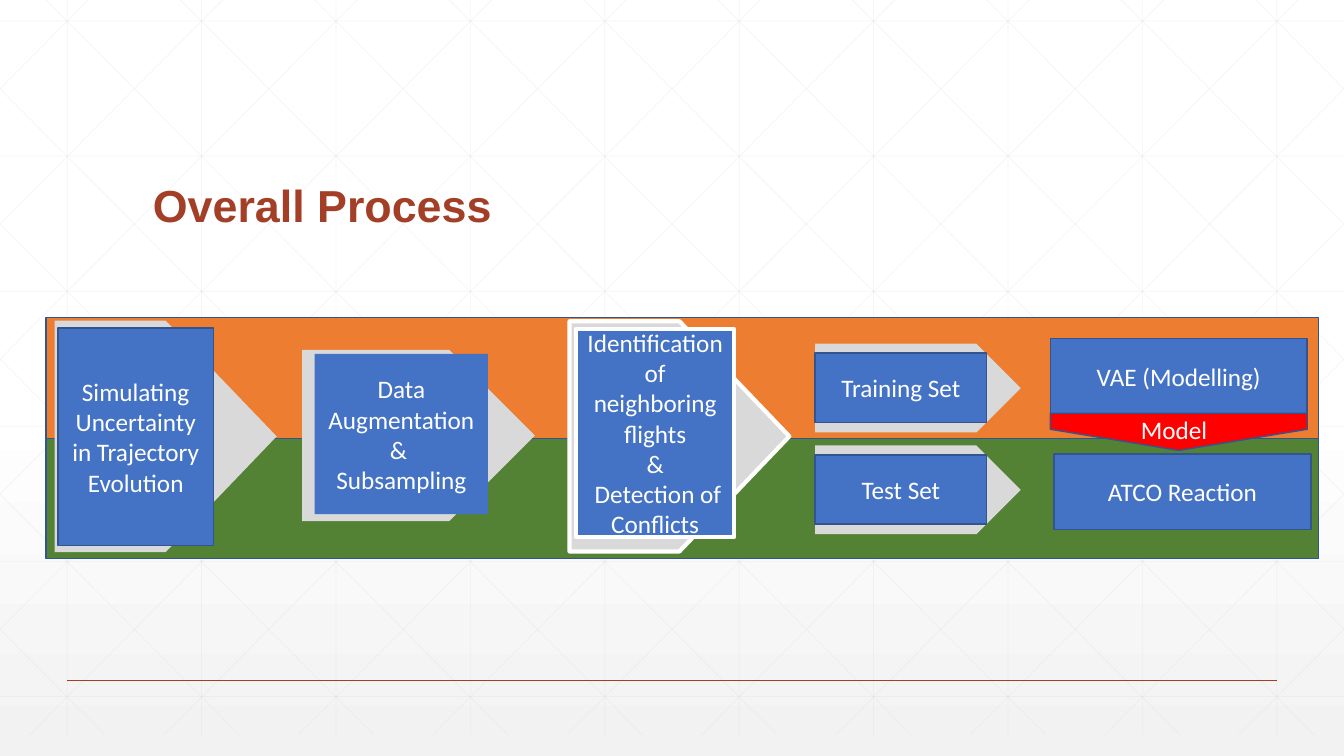
from dataclasses import dataclass

import pptx
import pptx.dml.color
import pptx.enum.shapes
import pptx.enum.text
import pptx.oxml
import pptx.oxml.ns
import pptx.util
from lxml import etree

Pt = pptx.util.Pt
Shape = pptx.enum.shapes.MSO_SHAPE
Align = pptx.enum.text.PP_ALIGN
Anchor = pptx.enum.text.MSO_ANCHOR

COLORS = {
    "white": "FFFFFF",
    "mist": "F2F2F2",
    "grid": "D9D9D9",
    "rust": "A43F27",
    "green": "548235",
    "orange": "ED7D31",
    "blue": "4472C4",
    "edge": "325491",
    "red": "FF0000",
}
PAGE_WIDTH, PAGE_HEIGHT = 960, 540
GRID_TOP, GRID_BOTTOM = -15, 525
GRID_STEP = 96
DIAGONAL_RUN = 537


@dataclass
class Block:
    left: float
    top: float
    width: float
    height: float
    fill: str = "blue"
    edge: str | None = "edge"
    edge_width: float = 1
    lines: tuple[str, ...] = ()
    shape: Shape = Shape.RECTANGLE
    rotation: float = 0
    point: float = 0.5


@dataclass
class Rule:
    x1: float
    y1: float
    x2: float
    y2: float
    color: str = "grid"
    width: float = 0.5
    opacity: int = 25


def arrow(left: float, top: float, width: float, height: float,
          edge: str | None = None, edge_width: float = 1) -> Block:
    return Block(left, top, width, height, "grid", edge, edge_width, shape=Shape.PENTAGON)


def rgb(name: str) -> pptx.dml.color.RGBColor:
    return pptx.dml.color.RGBColor.from_string(COLORS[name])


def format_text(frame, lines: tuple[str, ...], align: Align) -> None:
    frame.word_wrap = True
    for index, line in enumerate(lines):
        para = frame.paragraphs[0] if index == 0 else frame.add_paragraph()
        para.text = line
        para.alignment = align
        para.font.name = "Calibri"
        para.font.size = Pt(18)
        para.font.color.rgb = rgb("white")


def draw_block(page, block: Block) -> None:
    shape = page.shapes.add_shape(block.shape, Pt(block.left), Pt(block.top),
                                  Pt(block.width), Pt(block.height))
    shape.shadow.inherit = False
    shape.rotation = block.rotation
    if block.shape == Shape.PENTAGON:
        shape.adjustments[0] = block.point
    shape.fill.solid()
    shape.fill.fore_color.rgb = rgb(block.fill)
    if block.edge:
        shape.line.color.rgb = rgb(block.edge)
        shape.line.width = Pt(block.edge_width)
    else:
        shape.line.fill.background()
    if block.lines:
        shape.text_frame.vertical_anchor = Anchor.MIDDLE
        format_text(shape.text_frame, block.lines, Align.CENTER)


def draw_rule(page, rule: Rule) -> None:
    line = page.shapes.add_connector(pptx.enum.shapes.MSO_CONNECTOR.STRAIGHT,
                                     Pt(rule.x1), Pt(rule.y1), Pt(rule.x2), Pt(rule.y2))
    line.line.color.rgb = rgb(rule.color)
    line.line.width = Pt(rule.width)
    qn = pptx.oxml.ns.qn
    properties = line._element.spPr
    if rule.opacity < 100:
        color = next(properties.iter(qn("a:srgbClr")))
        etree.SubElement(color, qn("a:alpha")).set("val", str(rule.opacity * 1000))
    etree.SubElement(properties, qn("a:effectLst"))


def diagonal(start: float) -> Rule:
    slope = (GRID_BOTTOM - GRID_TOP) / DIAGONAL_RUN
    left, right = max(start, 0), min(start + DIAGONAL_RUN, PAGE_WIDTH)
    return Rule(left, GRID_TOP + (left - start) * slope,
                right, GRID_TOP + (right - start) * slope)


def grid_rules() -> list[Rule]:
    verticals = [Rule(48 + GRID_STEP * k, GRID_TOP, 48 + GRID_STEP * k, GRID_BOTTOM)
                 for k in range(10)]
    horizontals = [Rule(0, 15 + 96.5 * k, PAGE_WIDTH, 15 + 96.5 * k) for k in range(6)]
    falling = [diagonal(18 + GRID_STEP * k) for k in range(-5, 10)]
    rising = [Rule(PAGE_WIDTH - rule.x1, rule.y1, PAGE_WIDTH - rule.x2, rule.y2)
              for rule in falling]
    return verticals + horizontals + falling + rising


def draw_background(page) -> None:
    fill = page.background.fill
    fill.gradient()
    fill.gradient_angle = 270
    for stop, position, name in zip(fill.gradient_stops, (0.53, 1), ("white", "mist")):
        stop.position = position
        stop.color.rgb = rgb(name)
    for rule in grid_rules():
        draw_rule(page, rule)
    draw_rule(page, Rule(48, 486, 912, 486, "rust", 1, 100))


def draw_title(page) -> None:
    title = page.shapes.title
    page.shapes._spTree.append(title._element)
    title.left, title.top, title.width, title.height = Pt(102), Pt(39.6), Pt(756), Pt(129.6)
    frame = title.text_frame
    frame.text = "Overall Process"
    frame.auto_size = pptx.enum.text.MSO_AUTO_SIZE.NONE
    frame.vertical_anchor = Anchor.BOTTOM
    para = frame.paragraphs[0]
    para.alignment = Align.LEFT
    para.line_spacing = 0.9
    para.font.name = "Arial"
    para.font.size = Pt(32)
    para.font.bold = True
    para.font.color.rgb = rgb("rust")


def process_blocks() -> list[Block]:
    blocks = [
        Block(33, 313.2, 908.8, 85.8, "green"),
        Block(33, 226.6, 908.8, 86.8, "orange"),
    ]
    for top, label in ((245.5, "Training Set"), (318.2, "Test Set")):
        blocks += [arrow(582.3, top, 146.8, 63.4),
                   Block(582.3, top + 6.7, 122.4, 49.5, lines=(label,))]
    return blocks + [
        Block(753, 324.2, 183.4, 54, lines=("ATCO Reaction",)),
        arrow(39, 229, 158.6, 165.4),
        Block(41.5, 234.2, 110.9, 155.5,
              lines=("Simulating Uncertainty in Trajectory Evolution",)),
        Block(750.3, 241.7, 183.4, 54, lines=("VAE (Modelling)",)),
        Block(828.7, 216.7, 26.6, 183.6, "red", shape=Shape.PENTAGON,
              rotation=90, point=0.57),
        arrow(215.8, 250, 166.3, 122.2),
        Block(224.8, 252.8, 123.8, 114.5, edge=None,
              lines=("Data Augmentation & ", "Subsampling")),
        arrow(406.8, 229.5, 157, 164.4, "white", 3),
        Block(411.5, 235, 113, 148.6, edge="white", edge_width=3,
              lines=("Identification of neighboring flights", "&",
                     " Detection of Conflicts")),
    ]


def main() -> None:
    deck = pptx.Presentation()
    deck.slide_width, deck.slide_height = Pt(PAGE_WIDTH), Pt(PAGE_HEIGHT)
    page = deck.slides.add_slide(deck.slide_layouts[5])
    draw_background(page)
    draw_title(page)
    for block in process_blocks():
        draw_block(page, block)
    model_label = page.shapes.add_textbox(Pt(807.8), Pt(292.3), Pt(68.4), Pt(28.8))
    format_text(model_label.text_frame, ("Model",), Align.LEFT)
    deck.save("out.pptx")


if __name__ == "__main__":
    main()
